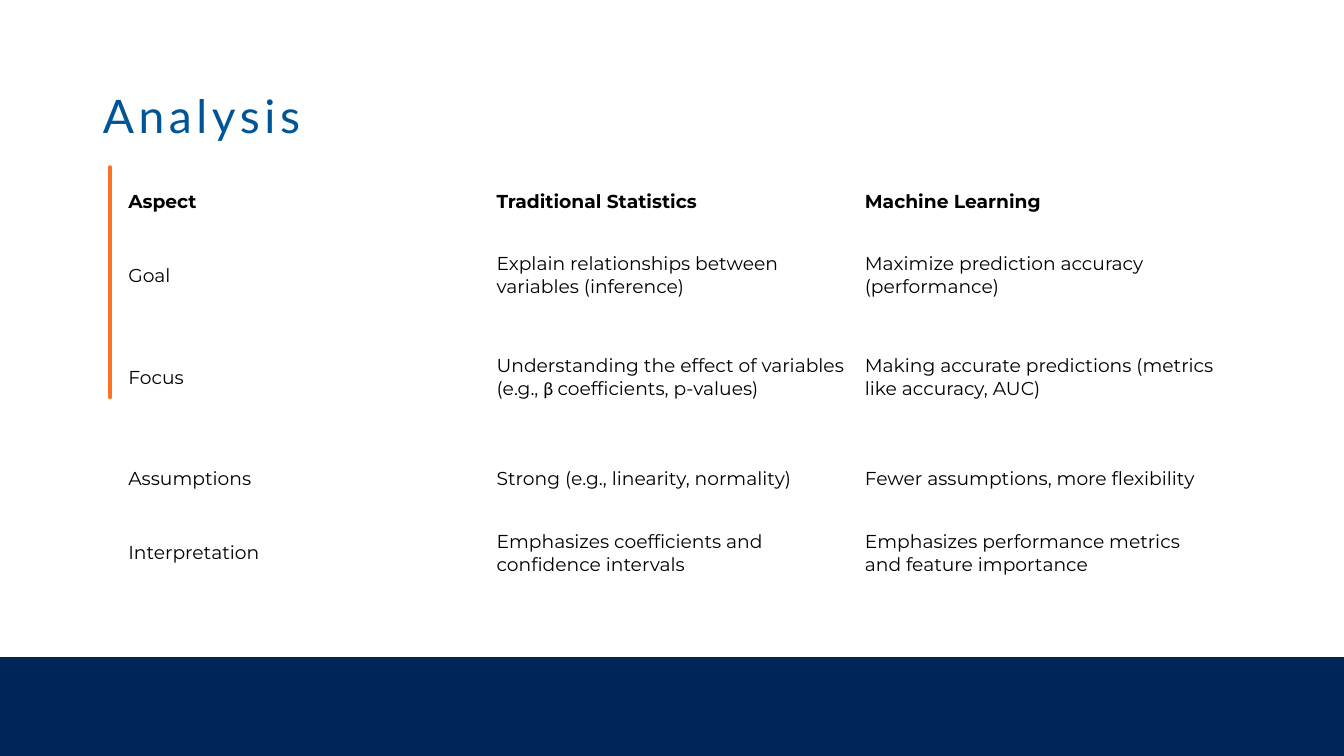
from lxml.etree import SubElement
from pptx import Presentation
from pptx.dml.color import RGBColor
from pptx.enum.shapes import MSO_CONNECTOR, MSO_SHAPE
from pptx.enum.text import MSO_ANCHOR, MSO_AUTO_SIZE, PP_ALIGN
from pptx.oxml.ns import qn
from pptx.util import Inches, Pt

NAVY = RGBColor(0x00, 0x26, 0x57)
BLUE = RGBColor(0x00, 0x55, 0x96)
ORANGE = RGBColor(0xFE, 0x73, 0x23)
BLACK = RGBColor(0x00, 0x00, 0x00)

TITLE_FONT = "Lato"
BODY_FONT = "Montserrat"
SYMBOL_FONT = "Calibri"

COLUMN_WIDTH = 5.48
ROW_HEIGHTS = [1.1, 1.1, 1.93, 1.1, 1.1]
COMPARISON = [
    ["Aspect", "Traditional Statistics", "Machine Learning"],
    ["Goal", "Explain relationships between variables (inference)",
     "Maximize prediction accuracy (performance)"],
    ["Focus",
     [("Understanding the effect of variables (e.g., ", BODY_FONT),
      ("β ", SYMBOL_FONT), ("coefficients, p-values)", BODY_FONT)],
     "Making accurate predictions (metrics like accuracy, AUC)"],
    ["Assumptions", "Strong (e.g., linearity, normality)",
     "Fewer assumptions, more flexibility"],
    ["Interpretation", "Emphasizes coefficients and confidence intervals",
     "Emphasizes performance metrics and feature importance"],
]


def set_attributes(target, values):
    for name, value in values.items():
        setattr(target, name, value)


class SlideBuilder:
    def __init__(self, slide):
        self.slide = slide
        self.title_format = {"name": TITLE_FONT, "size": Pt(49.5), "bold": False}
        self.body_format = {"size": Pt(20)}

    def add_band(self, left, top, width, height, color):
        band = self.slide.shapes.add_shape(
            MSO_SHAPE.RECTANGLE, *map(Inches, (left, top, width, height)))
        band.shadow.inherit = False
        band.fill.solid()
        band.fill.fore_color.rgb = color
        band.line.fill.background()

    def set_title(self, text, left, top, width, height):
        title = self.slide.shapes.title
        set_attributes(title, {"left": Inches(left), "top": Inches(top),
                               "width": Inches(width), "height": Inches(height)})
        set_attributes(title.text_frame, {
            "margin_left": 0, "margin_top": 0, "margin_right": 0, "margin_bottom": 0,
            "word_wrap": True, "vertical_anchor": MSO_ANCHOR.TOP,
            "auto_size": MSO_AUTO_SIZE.NONE})
        paragraph = title.text_frame.paragraphs[0]
        set_attributes(paragraph, {"alignment": PP_ALIGN.LEFT, "line_spacing": Pt(54)})
        run = paragraph.add_run()
        run.text = text
        set_attributes(run.font, self.title_format)
        run.font.color.rgb = BLUE
        run.font._element.set("spc", "500")

    def add_rule(self, x, top, bottom, color, weight):
        """Draw a vertical line with round ends."""
        rule = self.slide.shapes.add_connector(
            MSO_CONNECTOR.STRAIGHT, *map(Inches, (x, top, x, bottom)))
        rule.line.color.rgb = color
        rule.line.width = Pt(weight)
        rule.line._get_or_add_ln().set("cap", "rnd")
        SubElement(rule._element.spPr, qn("a:effectLst"))

    def add_table(self, rows, left, top, column_width, row_heights):
        columns = len(rows[0])
        table = self.slide.shapes.add_table(
            len(rows), columns, Inches(left), Inches(top),
            Inches(column_width * columns), Inches(sum(row_heights))).table
        set_attributes(table, {"first_row": False, "horz_banding": False})
        for column in table.columns:
            column.width = Inches(column_width)
        for row_index, (texts, height) in enumerate(zip(rows, row_heights)):
            table.rows[row_index].height = Inches(height)
            for column_index, content in enumerate(texts):
                self.fill_cell(table.cell(row_index, column_index), content,
                               bold=row_index == 0)

    def fill_cell(self, cell, content, bold):
        """Write a string, or a list of (text, font name) pieces, into a cell."""
        cell.fill.background()
        cell.vertical_anchor = MSO_ANCHOR.MIDDLE
        pieces = [(content, BODY_FONT)] if isinstance(content, str) else content
        for text, font_name in pieces:
            run = cell.text_frame.paragraphs[0].add_run()
            run.text = text
            set_attributes(run.font, {**self.body_format, "name": font_name, "bold": bold})
            run.font.color.rgb = BLACK


def main():
    presentation = Presentation()
    presentation.slide_width = Inches(20)
    presentation.slide_height = Inches(11.25)
    title_only = presentation.slide_layouts[5]
    builder = SlideBuilder(presentation.slides.add_slide(title_only))

    builder.add_band(0, 9.78, 20, 1.47, NAVY)
    builder.set_title("Analysis", 1.53, 1.37, 15.01, 0.76)
    builder.add_rule(1.64, 2.49, 5.91, ORANGE, 4.5)
    builder.add_table(COMPARISON, 1.81, 2.45, COLUMN_WIDTH, ROW_HEIGHTS)

    presentation.save("out.pptx")


if __name__ == "__main__":
    main()
